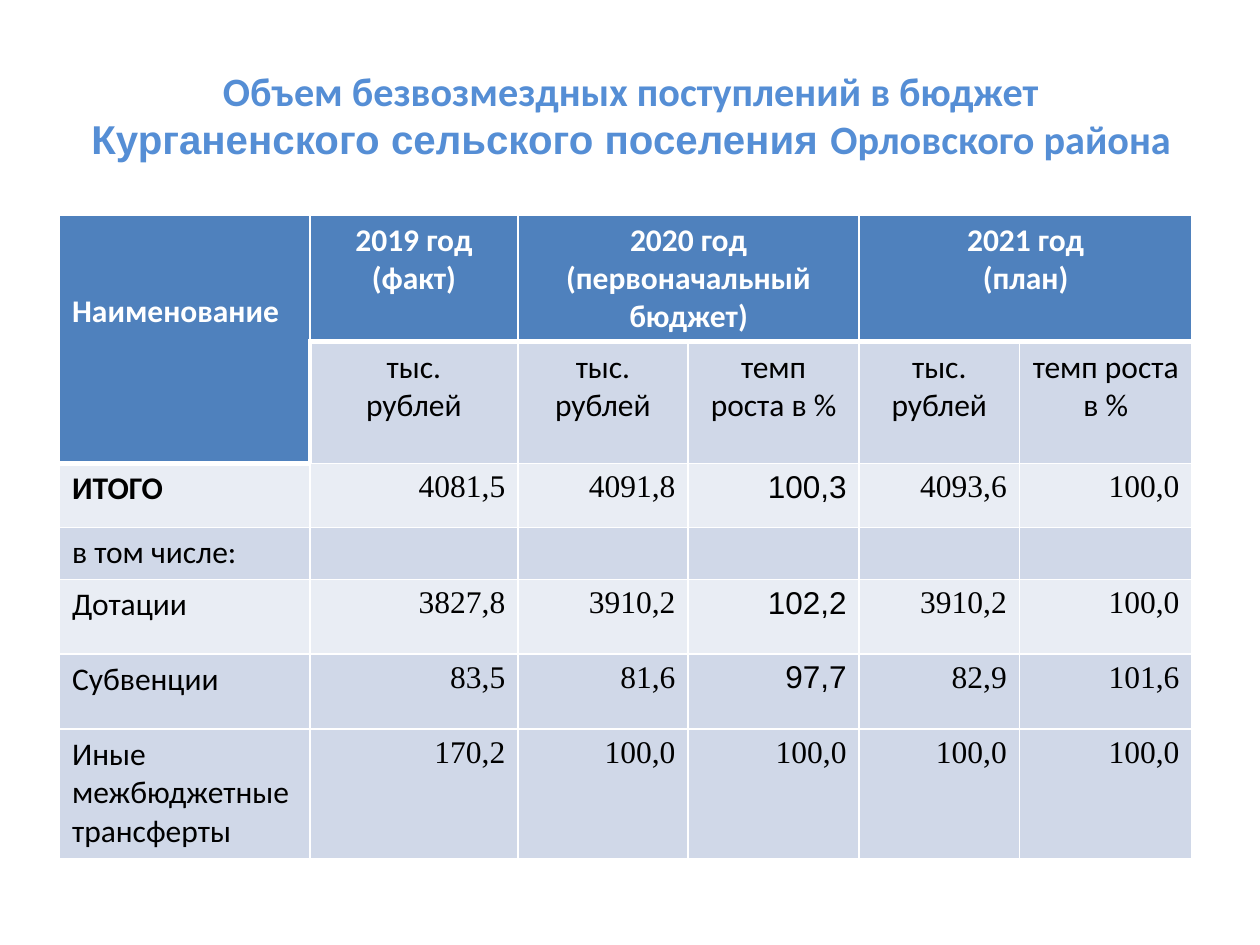
import dataclasses

import lxml.etree
import pptx
import pptx.dml.color
import pptx.enum.text
import pptx.oxml.ns
import pptx.util

Cm = pptx.util.Cm
Pt = pptx.util.Pt
Align = pptx.enum.text.PP_ALIGN


@dataclasses.dataclass
class Theme:
    title: str = "558ED5"
    header: str = "4F81BD"
    dark_band: str = "D0D8E8"
    light_band: str = "E9EDF4"
    white: str = "FFFFFF"
    black: str = "000000"
    title_size: int = 23
    body_size: int = 18
    sans: str = "Calibri"
    serif: str = "Times New Roman"
    accent: str = "Arial"


class SlideBuilder:
    def __init__(self, slide, theme):
        self.slide = slide
        self.theme = theme

    def set_font(self, font, name, size, color, bold=False):
        font.name = name
        font.size = Pt(size)
        font.bold = bold
        font.color.rgb = pptx.dml.color.RGBColor.from_string(color)

    def add_title(self, parts, left, top, width, height):
        frame = self.slide.shapes.add_textbox(left, top, width, height).text_frame
        frame.word_wrap = True
        frame.vertical_anchor = pptx.enum.text.MSO_ANCHOR.MIDDLE
        paragraph = frame.paragraphs[0]
        paragraph.alignment = Align.CENTER
        for text, name in parts:
            run = paragraph.add_run()
            run.text = text
            self.set_font(run.font, name, self.theme.title_size, self.theme.title, True)

    def add_table(self, left, top, widths, heights):
        table = self.slide.shapes.add_table(
            len(heights), len(widths), left, top,
            Cm(sum(widths)), Cm(sum(heights))).table
        for column, width in zip(table.columns, widths):
            column.width = Cm(width)
        for row, height in zip(table.rows, heights):
            row.height = Cm(height)
        return table

    def fill_cell(self, cell, text, fill, align, name, color, bold=False):
        cell.fill.solid()
        cell.fill.fore_color.rgb = pptx.dml.color.RGBColor.from_string(fill)
        cell.text = text
        for paragraph in cell.text_frame.paragraphs:
            paragraph.alignment = align
            self.set_font(paragraph.font, name, self.theme.body_size, color, bold)

    def set_borders(self, cell, thick_sides):
        properties = cell._tc.get_or_add_tcPr()
        for index, side in enumerate("LRTB"):
            width = Pt(3 if side in thick_sides else 1)
            line = lxml.etree.Element(pptx.oxml.ns.qn(f"a:ln{side}"), w=str(width))
            fill = lxml.etree.SubElement(line, pptx.oxml.ns.qn("a:solidFill"))
            lxml.etree.SubElement(fill, pptx.oxml.ns.qn("a:srgbClr"), val=self.theme.white)
            properties.insert(index, line)


HEADERS = ["Наименование", "2019 год (факт)", "2020 год (первоначальный бюджет)", "",
           "2021 год\n(план)", ""]
UNITS = ["", "тыс.\nрублей", "тыс. рублей", "темп роста в %",
         "тыс. рублей", "темп роста в %"]
BODY = [
    ["ИТОГО", "4081,5", "4091,8", "100,3", "4093,6", "100,0"],
    ["в том числе:", "", "", "", "", ""],
    ["Дотации", "3827,8", "3910,2", "102,2", "3910,2", "100,0"],
    ["Субвенции", "83,5", "81,6", "97,7", "82,9", "101,6"],
    ["Иные межбюджетные трансферты", "170,2", "100,0", "100,0", "100,0", "100,0"],
]
COLUMN_WIDTHS = [5.05, 4.19, 3.43, 3.45, 3.23, 3.48]
ROW_HEIGHTS = [2.56, 2.44, 1.29, 1.05, 1.5, 1.52, 2.62]


def main():
    presentation = pptx.Presentation()
    presentation.slide_width = Cm(25.4)
    presentation.slide_height = Cm(19.05)
    theme = Theme()
    slide = presentation.slides.add_slide(presentation.slide_layouts[6])
    builder = SlideBuilder(slide, theme)

    # Title
    builder.add_title(
        [("Объем безвозмездных поступлений в бюджет ", theme.sans),
         ("Курганенского сельского поселения ", theme.accent),
         ("Орловского района", theme.sans)],
        Cm(1.3), Cm(0.91), Cm(22.86), Cm(2.79))

    # Table grid
    table = builder.add_table(Cm(1.2), Cm(4.33), COLUMN_WIDTHS, ROW_HEIGHTS)

    # Two header rows
    for column, text in enumerate(HEADERS):
        builder.fill_cell(table.cell(0, column), text, theme.header,
                          Align.CENTER if column else Align.LEFT,
                          theme.sans, theme.white, True)
    for column, text in enumerate(UNITS):
        builder.fill_cell(table.cell(1, column), text,
                          theme.dark_band if column else theme.header,
                          Align.CENTER, theme.sans, theme.black)
    table.cell(0, 0).margin_top = Cm(1.56)

    # Budget figures
    last = len(BODY) - 1
    for row, values in enumerate(BODY):
        band = theme.light_band if row % 2 == 0 and row != last else theme.dark_band
        for column, text in enumerate(values):
            if column == 0:
                name = theme.sans
            elif column == 3 and row != last:
                name = theme.accent
            else:
                name = theme.serif
            builder.fill_cell(table.cell(row + 2, column), text, band,
                              Align.RIGHT if column else Align.LEFT, name,
                              theme.black, bold=(row == 0 and column == 0))

    # White borders, thick around the header
    for row in range(len(ROW_HEIGHTS)):
        for column in range(len(COLUMN_WIDTHS)):
            thick = ""
            if row == 0 or (row == 1 and column == 0):
                thick += "B"
            if (row == 1 and column > 0) or (row == 2 and column == 0):
                thick += "T"
            if row == 1 and column == 1:
                thick += "L"
            builder.set_borders(table.cell(row, column), thick)

    # Merged headers
    table.cell(0, 0).merge(table.cell(1, 0))
    for column in (2, 4):
        table.cell(0, column).merge(table.cell(0, column + 1))

    presentation.save("out.pptx")


if __name__ == "__main__":
    main()
